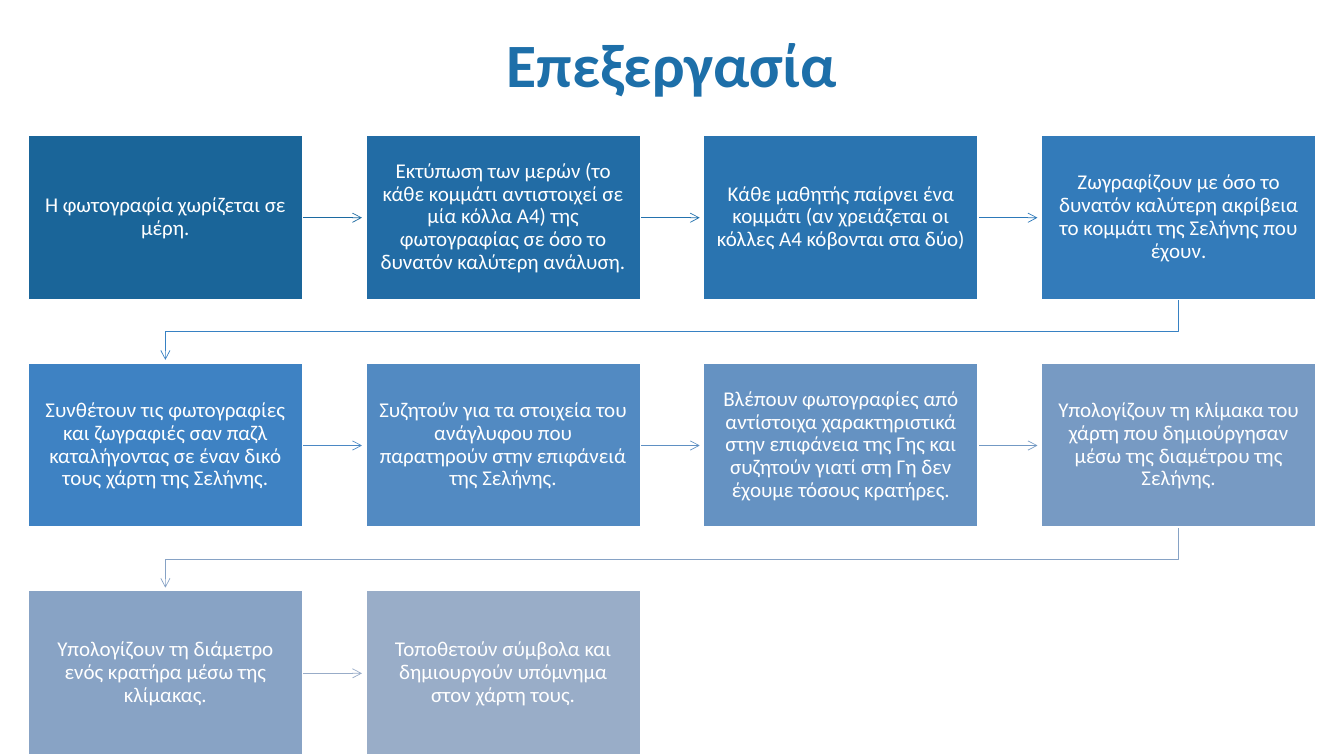
from dataclasses import dataclass

from lxml import etree
from pptx import Presentation
from pptx.dml.color import RGBColor
from pptx.enum.shapes import MSO_CONNECTOR, MSO_SHAPE
from pptx.enum.text import MSO_ANCHOR, MSO_AUTO_SIZE, PP_ALIGN
from pptx.oxml.ns import qn
from pptx.util import Pt

RECT = MSO_SHAPE.RECTANGLE
STRAIGHT = MSO_CONNECTOR.STRAIGHT
CENTER = PP_ALIGN.CENTER
MIDDLE = MSO_ANCHOR.MIDDLE
NO_FIT = MSO_AUTO_SIZE.NONE

# Grid of steps, in px (100 to the inch)
COLS = 4
LEFT, TOP = 28, 134
WIDE, HIGH = 272, 163
STEP_X, STEP_Y = 335, 226

# Text, box fill, colour of the arrow to the next step
STEPS = [
    ("Η φωτογραφία χωρίζεται σε μέρη.", "1A6599", "1C6AA1"),
    ("Εκτύπωση των μερών (το κάθε κομμάτι αντιστοιχεί σε μία κόλλα Α4) της "
     "φωτογραφίας σε όσο το δυνατόν καλύτερη ανάλυση.", "226CA5", "2472AE"),
    ("Κάθε μαθητής παίρνει ένα κομμάτι (αν χρειάζεται οι κόλλες Α4 κόβονται "
     "στα δύο)", "2A74B0", "2D79B9"),
    ("Ζωγραφίζουν με όσο το δυνατόν καλύτερη ακρίβεια το κομμάτι της Σελήνης "
     "που έχουν.", "337BBA", "3781C3"),
    ("Συνθέτουν τις φωτογραφίες και ζωγραφιές σαν παζλ καταλήγοντας σε έναν "
     "δικό τους χάρτη της Σελήνης.", "3E82C3", "4B88C4"),
    ("Συζητούν για τα στοιχεία του ανάγλυφου που παρατηρούν στην επιφάνειά "
     "της Σελήνης.", "528AC2", "5F90C3"),
    ("Βλέπουν φωτογραφίες από αντίστοιχα χαρακτηριστικά στην επιφάνεια της "
     "Γης και συζητούν γιατί στη Γη δεν έχουμε τόσους κρατήρες.",
     "6592C2", "7399C4"),
    ("Υπολογίζουν τη κλίμακα του χάρτη που δημιούργησαν μέσω της διαμέτρου "
     "της Σελήνης.", "779AC3", "86A2C5"),
    ("Υπολογίζουν τη διάμετρο ενός κρατήρα μέσω της κλίμακας.",
     "88A3C5", "98ACC8"),
    ("Τοποθετούν σύμβολα και δημιουργούν υπόμνημα στον χάρτη τους.",
     "99ADC8", None),
]


@dataclass
class Theme:
    font: str = "Calibri"
    title: str = "1D6FA9"
    white: str = "FFFFFF"
    title_size: int = 44
    body_size: int = 15
    edge: float = 1
    thin: float = 0.5


def px(n):
    return n * 9144


class Board:
    def __init__(self, slide, theme):
        self.shapes = slide.shapes
        self.theme = theme

    def label(self, frame, text, size, color, bold=False):
        frame.word_wrap = True
        frame.auto_size = NO_FIT
        frame.vertical_anchor = MIDDLE
        frame.text = text
        para = frame.paragraphs[0]
        para.alignment = CENTER
        para.line_spacing = 0.9
        font = para.font
        font.name, font.size, font.bold = self.theme.font, Pt(size), bold
        font.color.rgb = RGBColor.from_string(color)

    def title(self, text, x, y, w, h):
        box = self.shapes.title
        box.left, box.top, box.width, box.height = map(px, (x, y, w, h))
        self.label(box.text_frame, text, self.theme.title_size,
                   self.theme.title, True)

    def box(self, text, x, y, fill):
        box = self.shapes.add_shape(RECT, *map(px, (x, y, WIDE, HIGH)))
        box.shadow.inherit = False
        box.fill.solid()
        box.fill.fore_color.rgb = RGBColor.from_string(fill)
        box.line.color.rgb = RGBColor.from_string(self.theme.white)
        box.line.width = Pt(self.theme.edge)
        frame = box.text_frame
        frame.margin_left = frame.margin_right = px(13)
        frame.margin_top = frame.margin_bottom = px(14)
        self.label(frame, text, self.theme.body_size, self.theme.white)

    def stroke(self, shape, color):
        shape.line.color.rgb = RGBColor.from_string(color)
        shape.line.width = Pt(self.theme.thin)
        ln = shape._element.spPr.find(qn("a:ln"))
        etree.SubElement(ln, qn("a:tailEnd"), type="arrow")

    def arrow(self, x, y, length, color):
        link = self.shapes.add_connector(
            STRAIGHT, px(x), px(y), px(x + length), px(y))
        self.stroke(link, color)
        etree.SubElement(link._element.spPr, qn("a:effectLst"))

    def elbow(self, points, color):
        start, *rest = [(px(x), px(y)) for x, y in points]
        outline = self.shapes.build_freeform(*start)
        outline.add_line_segments(rest, close=False)
        bend = outline.convert_to_shape()
        bend.shadow.inherit = False
        bend.fill.background()
        self.stroke(bend, color)


def main():
    deck = Presentation()
    deck.slide_width, deck.slide_height = px(1333), px(750)
    board = Board(deck.slides.add_slide(deck.slide_layouts[5]), Theme())

    board.title("Επεξεργασία", 0, 1, 1333, 133)

    # Steps run row by row; each arrow leads to the next one
    for i, (text, fill, color) in enumerate(STEPS):
        row, col = divmod(i, COLS)
        x, y = LEFT + col * STEP_X, TOP + row * STEP_Y
        if color and col < COLS - 1:
            board.arrow(x + WIDE, y + 82, 59, color)
        elif color:
            mid, first = x + WIDE // 2, LEFT + WIDE // 2
            board.elbow([(mid, y + 164), (mid, y + 195),
                         (first, y + 195), (first, y + 223)], color)
        board.box(text, x, y, fill)

    deck.save("out.pptx")


if __name__ == "__main__":
    main()
